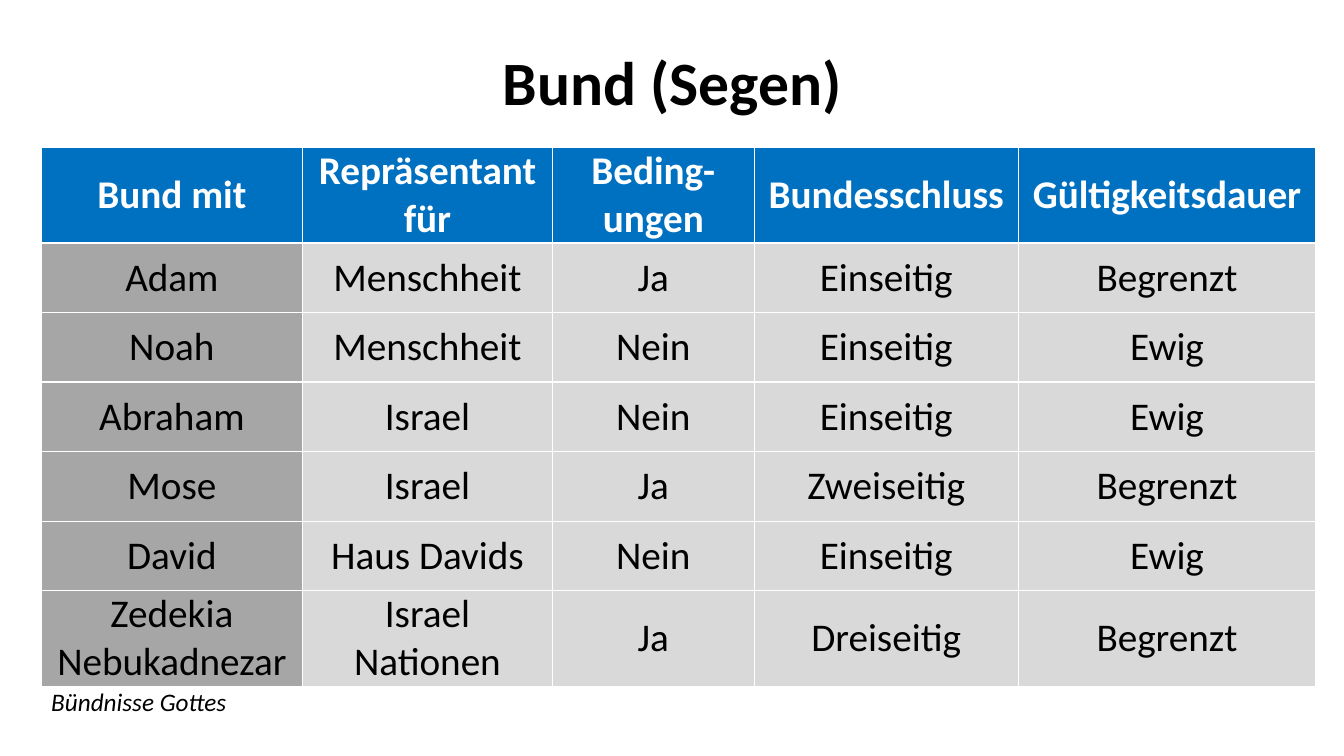
from pptx import Presentation
from pptx.dml.color import RGBColor
from pptx.enum.text import MSO_ANCHOR, MSO_AUTO_SIZE, PP_ALIGN
from pptx.util import Inches, Pt

CENTER = PP_ALIGN.CENTER
LEFT = PP_ALIGN.LEFT
MIDDLE = MSO_ANCHOR.MIDDLE
GROW = MSO_AUTO_SIZE.SHAPE_TO_FIT_TEXT
NO_FIT = MSO_AUTO_SIZE.NONE
TITLE_ONLY = 5

BLACK = "000000"
WHITE = "FFFFFF"
BLUE = "0070C0"
DARK_GRAY = "A6A6A6"
LIGHT_GRAY = "D9D9D9"

COLUMN_WIDTHS = [2.59, 2.48, 2, 2.62, 2.95]
HEADER_HEIGHT = 0.47
ROW_HEIGHT = 0.69
COVENANTS = [
    ["Bund mit", "Repräsentant für", ["Beding-", "ungen"], "Bundesschluss", "Gültigkeitsdauer"],
    ["Adam", "Menschheit", "Ja", "Einseitig", "Begrenzt"],
    ["Noah", "Menschheit", "Nein", "Einseitig", "Ewig"],
    ["Abraham", "Israel", "Nein", "Einseitig", "Ewig"],
    ["Mose", "Israel", "Ja", "Zweiseitig", "Begrenzt"],
    ["David", "Haus Davids", "Nein", "Einseitig", "Ewig"],
    ["Zedekia\nNebukadnezar", "Israel\nNationen", "Ja", "Dreiseitig", "Begrenzt"],
]


def color(value):
    return RGBColor.from_string(value)


class SlideBuilder:
    font = "Calibri"

    def __init__(self, deck):
        self.page = deck.slides.add_slide(deck.slide_layouts[TITLE_ONLY])

    def add_text(self, frame, paragraphs, size, tint=BLACK, bold=False, italic=False, align=CENTER):
        for index, text in enumerate(paragraphs):
            para = frame.add_paragraph() if index else frame.paragraphs[0]
            para.alignment = align
            for number, line in enumerate(text.split("\n")):
                if number:
                    para.add_line_break()
                span = para.add_run()
                span.text = line
                span.font.name = self.font
                span.font.size = Pt(size)
                span.font.bold = bold
                span.font.italic = italic
                span.font.color.rgb = color(tint)

    def title(self, text, left, top, width, height):
        box = self.page.shapes.title
        box.left, box.top = Inches(left), Inches(top)
        box.width, box.height = Inches(width), Inches(height)
        frame = box.text_frame
        frame.vertical_anchor = MIDDLE
        frame.auto_size = NO_FIT
        self.add_text(frame, [text], 44, bold=True)
        frame.paragraphs[0].line_spacing = 0.9

    def table(self, rows, widths, left, top):
        height = HEADER_HEIGHT + ROW_HEIGHT * (len(rows) - 1)
        grid = self.page.shapes.add_table(
            len(rows), len(widths), Inches(left), Inches(top), Inches(sum(widths)), Inches(height)
        ).table
        grid.horz_banding = False
        for column, width in zip(grid.columns, widths):
            column.width = Inches(width)
        for row, texts in enumerate(rows):
            grid.rows[row].height = Inches(ROW_HEIGHT if row else HEADER_HEIGHT)
            for column, text in enumerate(texts):
                self.cell(grid.cell(row, column), text, row == 0, column == 0)

    def cell(self, cell, text, is_header, is_first):
        cell.margin_left = cell.margin_right = Inches(0.14)
        cell.margin_top = cell.margin_bottom = Inches(0)
        cell.vertical_anchor = MIDDLE
        cell.fill.solid()
        body_fill = DARK_GRAY if is_first else LIGHT_GRAY
        cell.fill.fore_color.rgb = color(BLUE if is_header else body_fill)
        paragraphs = text if isinstance(text, list) else [text]
        self.add_text(cell.text_frame, paragraphs, 28, WHITE if is_header else BLACK, bold=is_header)

    def caption(self, text, left, top, width, height):
        box = self.page.shapes.add_textbox(Inches(left), Inches(top), Inches(width), Inches(height))
        frame = box.text_frame
        frame.word_wrap = False
        frame.auto_size = GROW
        self.add_text(frame, [text], 18, italic=True, align=LEFT)


def main():
    deck = Presentation()
    deck.slide_width, deck.slide_height = Inches(13.33), Inches(7.5)
    slide = SlideBuilder(deck)
    slide.title("Bund (Segen)", 0.92, 0.4, 11.5, 0.89)
    slide.table(COVENANTS, COLUMN_WIDTHS, 0.41, 1.46)
    slide.caption("Bündnisse Gottes", 0.41, 6.76, 1.96, 0.4)
    deck.save("out.pptx")


if __name__ == "__main__":
    main()
